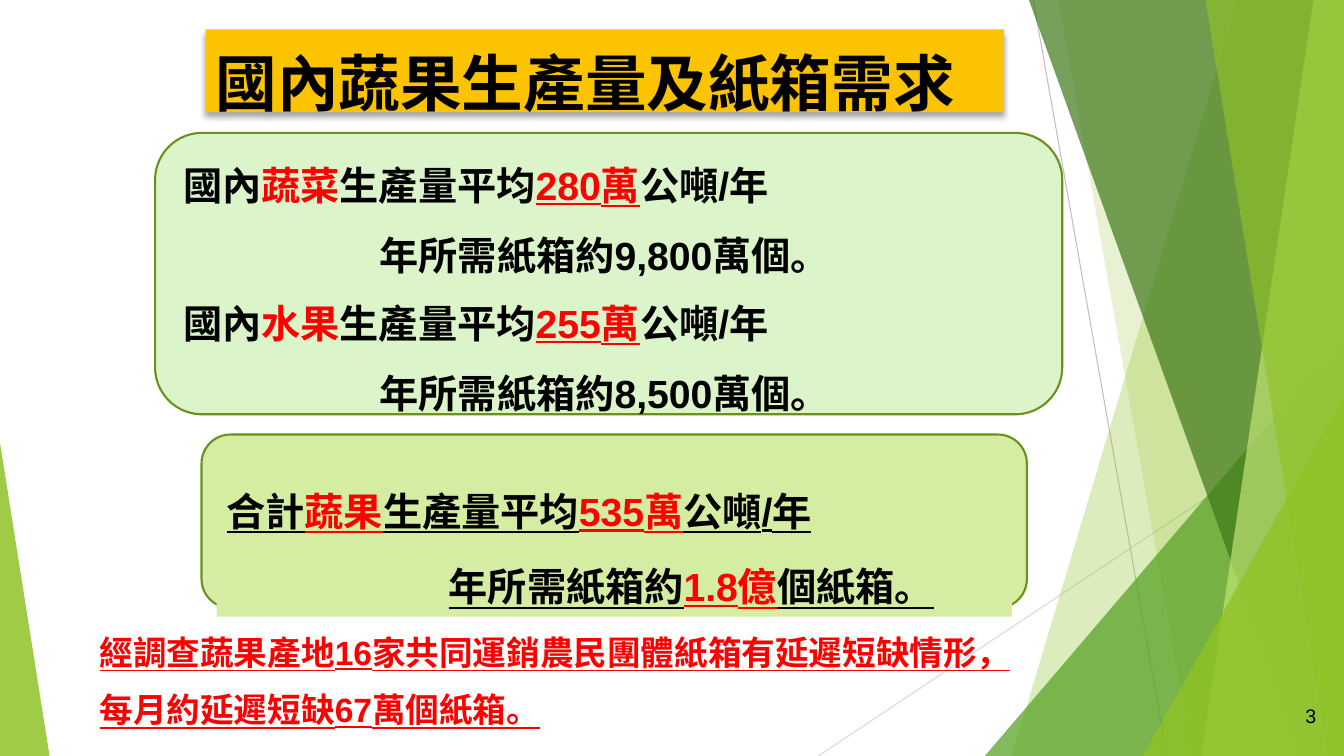
import pptx
import pptx.dml.color
import pptx.enum.shapes
import pptx.enum.text
import pptx.oxml
import pptx.oxml.ns
import pptx.util
from pptx.util import Cm

RGBColor = pptx.dml.color.RGBColor
SHAPES = pptx.enum.shapes.MSO_SHAPE
ANCHOR = pptx.enum.text.MSO_ANCHOR
ALIGN = pptx.enum.text.PP_ALIGN
qn = pptx.oxml.ns.qn

BLACK = RGBColor(0x00, 0x00, 0x00)
RED = RGBColor(0xFF, 0x00, 0x00)
GOLD = RGBColor(0xFC, 0xC3, 0x00)
LIME = RGBColor(0x90, 0xC2, 0x26)
LEAF = RGBColor(0x54, 0xA0, 0x21)
FOREST = RGBColor(0x3F, 0x78, 0x19)
PALE_LIME = RGBColor(0xC0, 0xE4, 0x74)
MINT = RGBColor(0xDB, 0xF4, 0xCA)
PISTACHIO = RGBColor(0xD5, 0xED, 0xA2)
OLIVE = RGBColor(0x6B, 0x90, 0x1C)
GRAY = RGBColor(0xBF, 0xBF, 0xBF)
LIGHT_GRAY = RGBColor(0xD9, 0xD9, 0xD9)

LATIN_FONT = "Arial"
CHINESE_FONT = "Noto Sans CJK SC"
WIDTH, HEIGHT = 33.87, 19.05
TITLE_SHADOW = (
    '<a:effectLst xmlns:a="http://schemas.openxmlformats.org/drawingml/2006/main">'
    '<a:outerShdw blurRad="50800" dist="38100" dir="5400000" rotWithShape="0">'
    '<a:srgbClr val="000000"><a:alpha val="35000"/></a:srgbClr>'
    '</a:outerShdw></a:effectLst>'
)


def place(shape, box):
    shape.left, shape.top, shape.width, shape.height = map(Cm, box)


def paint(shape, color, opacity=100, outline=None):
    shape.shadow.inherit = False
    shape.fill.solid()
    shape.fill.fore_color.rgb = color
    if opacity < 100:
        choice = shape.fill._xPr.find(qn("a:solidFill"))[0]
        choice.append(choice.makeelement(qn("a:alpha"), {"val": str(opacity * 1000)}))
    if outline is None:
        shape.line.fill.background()
    else:
        shape.line.color.rgb = outline
        shape.line.width = pptx.util.Pt(1.5)


def add_shape(slide, kind, box, color, **style):
    shape = slide.shapes.add_shape(kind, *map(Cm, box))
    paint(shape, color, **style)
    return shape


def add_facet(slide, top_x, bottom_x, color, opacity):
    builder = slide.shapes.build_freeform(Cm(top_x), Cm(0))
    corners = [(WIDTH, 0), (WIDTH, HEIGHT), (bottom_x, HEIGHT)]
    builder.add_line_segments([(Cm(x), Cm(y)) for x, y in corners], close=True)
    paint(builder.convert_to_shape(), color, opacity)


def add_triangle(slide, box, apex, color, opacity):
    shape = add_shape(slide, SHAPES.ISOSCELES_TRIANGLE, box, color, opacity=opacity)
    shape.adjustments[0] = apex


def add_line(slide, start, end, color):
    line = slide.shapes.add_connector(
        pptx.enum.shapes.MSO_CONNECTOR.STRAIGHT, *map(Cm, start + end))
    line.line.color.rgb = color
    line.line.width = pptx.util.Pt(0.75)
    properties = line._element.spPr
    properties.append(properties.makeelement(qn("a:effectLst"), {}))


def prepare_frame(shape, anchor=ANCHOR.TOP):
    frame = shape.text_frame
    frame.word_wrap = True
    frame.auto_size = pptx.enum.text.MSO_AUTO_SIZE.NONE
    frame.vertical_anchor = anchor
    return frame


def add_run(paragraph, text, size, color=BLACK, underline=False, bold=True,
            latin=LATIN_FONT):
    run = paragraph.add_run()
    run.text = text
    font = run.font
    font.name = latin
    font.size = pptx.util.Pt(size)
    font.bold = bold
    font.underline = underline
    font.color.rgb = color
    properties = run._r.get_or_add_rPr()
    properties.find(qn("a:latin")).addnext(
        properties.makeelement(qn("a:ea"), {"typeface": CHINESE_FONT}))


def format_paragraph(paragraph, spacing, indent=0):
    paragraph.alignment = ALIGN.LEFT
    paragraph.line_spacing = pptx.util.Pt(spacing)
    if indent:
        paragraph._p.get_or_add_pPr().set("marL", str(Cm(indent)))


def write_lines(shape, lines, spacing, indent, size=28):
    frame = prepare_frame(shape)
    for index, runs in enumerate(lines):
        paragraph = frame.add_paragraph() if index else frame.paragraphs[0]
        format_paragraph(paragraph, spacing, indent if index else 0)
        for text, color, underline in runs:
            add_run(paragraph, text, size, color, underline)


def add_text_box(slide, box):
    return slide.shapes.add_textbox(*map(Cm, box))


def add_background(slide):
    add_line(slide, (26.04, 0), (29.41, HEIGHT), GRAY)
    add_line(slide, (WIDTH, 10.24), (20.62, HEIGHT), LIGHT_GRAY)
    add_facet(slide, 31.19, 25.5, LIME, 30)
    add_facet(slide, 26.67, 30.05, LIME, 20)
    add_triangle(slide, (24.82, 8.46, 9.05, 10.59), 1, LEAF, 72)
    add_facet(slide, 25.93, 32.79, FOREST, 70)
    add_facet(slide, 33.1, 30.28, PALE_LIME, 70)
    add_facet(slide, 30.38, 33.48, LIME, 65)
    add_triangle(slide, (28.8, 9.98, 5.07, 9.07), 1, LIME, 80)
    add_triangle(slide, (0, 11.15, 1.25, 7.9), 0, LIME, 85)


def add_title(slide, text):
    title = slide.shapes.title
    place(title, (5.18, 0.74, 20.12, 2.08))
    title.fill.solid()
    title.fill.fore_color.rgb = GOLD
    title._element.spPr.append(pptx.oxml.parse_xml(TITLE_SHADOW))
    paragraph = prepare_frame(title).paragraphs[0]
    format_paragraph(paragraph, 60)
    add_run(paragraph, text, 44, latin=CHINESE_FONT)


def add_production(slide, top, crop, tonnage, boxes):
    lines = [
        [("國內", BLACK, False), (crop, RED, False), ("生產量平均", BLACK, False),
         (tonnage, RED, True), ("公噸/年", BLACK, False)],
        [(f"年所需紙箱約{boxes}個。", BLACK, False)],
    ]
    write_lines(add_text_box(slide, (4.37, top, 18.06, 3.81)), lines, 50, 4.95)


def add_total(slide):
    add_shape(slide, SHAPES.ROUNDED_RECTANGLE, (5.08, 10.95, 20.8, 4.37),
              PISTACHIO, outline=OLIVE)
    panel = add_shape(slide, SHAPES.RECTANGLE, (5.46, 11.43, 20.04, 4.11), PISTACHIO)
    lines = [
        [("合計", BLACK, True), ("蔬果", RED, True), ("生產量平均", BLACK, True),
         ("535萬", RED, True), ("公噸/年", BLACK, True)],
        [("年所需紙箱約", BLACK, True), ("1.8億", RED, True),
         ("個紙箱。", BLACK, True)],
    ]
    write_lines(panel, lines, 54, 5.6)


def add_slide_number(slide, number):
    box = add_text_box(slide, (31.52, 17.53, 1.9, 1.02))
    paragraph = prepare_frame(box, ANCHOR.MIDDLE).paragraphs[0]
    paragraph.alignment = ALIGN.RIGHT
    add_run(paragraph, number, 14, bold=False)


def main():
    presentation = pptx.Presentation()
    presentation.slide_width = Cm(WIDTH)
    presentation.slide_height = Cm(HEIGHT)
    slide = presentation.slides.add_slide(presentation.slide_layouts[5])
    add_background(slide)
    add_slide_number(slide, "3")
    add_title(slide, "國內蔬果生產量及紙箱需求")
    add_shape(slide, SHAPES.ROUNDED_RECTANGLE, (3.91, 3.35, 22.86, 7.09),
              MINT, outline=OLIVE)
    add_production(slide, 3.35, "蔬菜", "280萬", "9,800萬")
    add_production(slide, 6.83, "水果", "255萬", "8,500萬")
    add_total(slide)
    shortage = "經調查蔬果產地16家共同運銷農民團體紙箱有延遲短缺情形，每月約延遲短缺67萬個紙箱。"
    write_lines(add_text_box(slide, (2.26, 15.37, 23.67, 3)),
                [[(shortage, RED, True)]], 41, 0, 24)
    presentation.save("out.pptx")


if __name__ == "__main__":
    main()
